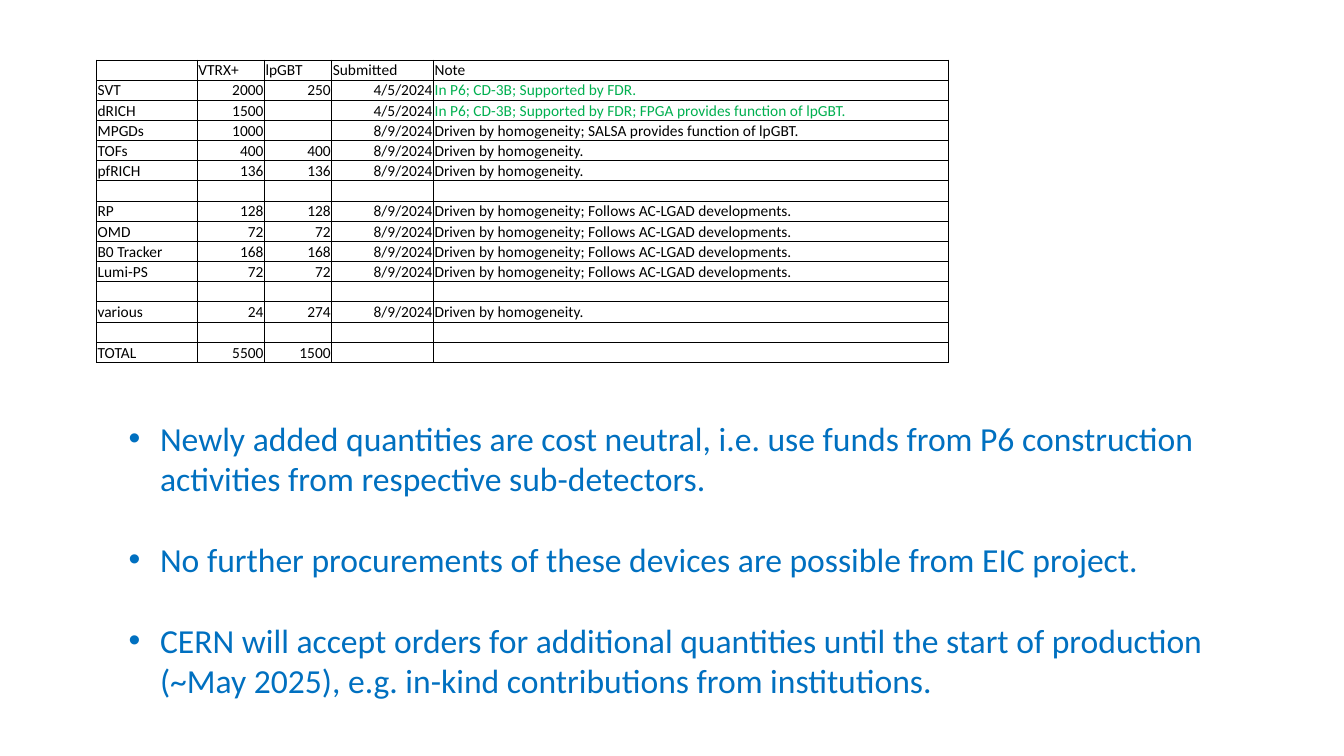
from lxml import etree
from pptx import Presentation
from pptx.dml.color import RGBColor
from pptx.enum.text import MSO_ANCHOR as Anchor, MSO_AUTO_SIZE as AutoSize, PP_ALIGN as Align
from pptx.oxml.ns import qn
from pptx.util import Emu, Pt

BLACK = RGBColor(0x00, 0x00, 0x00)
GREEN = RGBColor(0x00, 0xB0, 0x50)
BLUE = RGBColor(0x00, 0x70, 0xC0)

HOMOGENEITY = "Driven by homogeneity."
AC_LGAD = "Driven by homogeneity; Follows AC-LGAD developments."
FIRST, SECOND = "4/5/2024", "8/9/2024"
BLANK_ROW = ("",) * 5
ORDERS = [
    ("", "VTRX+", "lpGBT", "Submitted", "Note"),
    ("SVT", "2000", "250", FIRST, "In P6; CD-3B; Supported by FDR."),
    ("dRICH", "1500", "", FIRST,
     "In P6; CD-3B; Supported by FDR; FPGA provides function of lpGBT."),
    ("MPGDs", "1000", "", SECOND,
     "Driven by homogeneity; SALSA provides function of lpGBT."),
    ("TOFs", "400", "400", SECOND, HOMOGENEITY),
    ("pfRICH", "136", "136", SECOND, HOMOGENEITY),
    BLANK_ROW,
    ("RP", "128", "128", SECOND, AC_LGAD),
    ("OMD", "72", "72", SECOND, AC_LGAD),
    ("B0 Tracker", "168", "168", SECOND, AC_LGAD),
    ("Lumi-PS", "72", "72", SECOND, AC_LGAD),
    BLANK_ROW,
    ("various", "24", "274", SECOND, HOMOGENEITY),
    BLANK_ROW,
    ("TOTAL", "5500", "1500", "", ""),
]
REMARKS = [
    "Newly added quantities are cost neutral, i.e. use funds from P6 construction "
    "activities from respective sub-detectors.",
    "No further procurements of these devices are possible from EIC project.",
    "CERN will accept orders for additional quantities until the start of production "
    "(~May 2025), e.g. in-kind contributions from institutions.",
]


def px(count):
    return Emu(count * 9525)


class SlideWriter:
    """Draws tables and bullet lists on one slide in a shared style."""

    font_name = "Calibri"

    def __init__(self, slide):
        self.slide = slide

    def style(self, para, size, color):
        para.font.name = self.font_name
        para.font.size = Pt(size)
        para.font.color.rgb = color

    def border(self, cell):
        properties = cell._tc.get_or_add_tcPr()
        for position, side in enumerate(("lnL", "lnR", "lnT", "lnB")):
            line = etree.Element(qn(f"a:{side}"), w=str(Pt(0.5)))
            fill = etree.SubElement(line, qn("a:solidFill"))
            etree.SubElement(fill, qn("a:srgbClr"), val=str(BLACK))
            properties.insert(position, line)

    def cell(self, cell, text, align, color):
        cell.fill.background()
        cell.vertical_anchor = Anchor.BOTTOM
        cell.margin_left = cell.margin_right = cell.margin_top = px(1)
        cell.margin_bottom = 0
        para = cell.text_frame.paragraphs[0]
        para.text = text
        para.alignment = align
        self.style(para, 11, color)
        self.border(cell)

    def table(self, left, top, widths, height, rows):
        frame = self.slide.shapes.add_table(
            len(rows), len(widths), px(left), px(top), px(sum(widths)), px(height))
        table = frame.table
        table.first_row = table.horz_banding = False
        for column, width in zip(table.columns, widths):
            column.width = px(width)
        for row_index, row in enumerate(rows):
            for column_index, text in enumerate(row):
                is_number = row_index > 0 and 0 < column_index < 4
                align = Align.RIGHT if is_number else Align.LEFT
                color = GREEN if text.startswith("In P6") else BLACK
                self.cell(table.cell(row_index, column_index), text, align, color)

    def bullets(self, left, top, width, height, inset_top, items):
        box = self.slide.shapes.add_textbox(px(left), px(top), px(width), px(height))
        frame = box.text_frame
        frame.word_wrap = True
        frame.auto_size = AutoSize.SHAPE_TO_FIT_TEXT
        frame.margin_top = px(inset_top)
        for index, item in enumerate(items):
            para = frame.add_paragraph() if index else frame.paragraphs[0]
            para.text = item
            properties = para._p.get_or_add_pPr()
            properties.set("marL", str(px(78)))
            properties.set("indent", str(px(-30)))
            etree.SubElement(properties, qn("a:buFont"), typeface="Arial")
            etree.SubElement(properties, qn("a:buChar"), char="•")
            if index:
                para.space_before = Pt(29)
            self.style(para, 24, BLUE)


def main():
    deck = Presentation()
    deck.slide_width, deck.slide_height = px(1280), px(720)
    writer = SlideWriter(deck.slides.add_slide(deck.slide_layouts[6]))
    writer.table(92, 57, (96, 64, 64, 97, 490), 288, ORDERS)
    writer.bullets(65, 360, 1122, 346, 38, REMARKS)
    deck.save("out.pptx")


if __name__ == "__main__":
    main()
